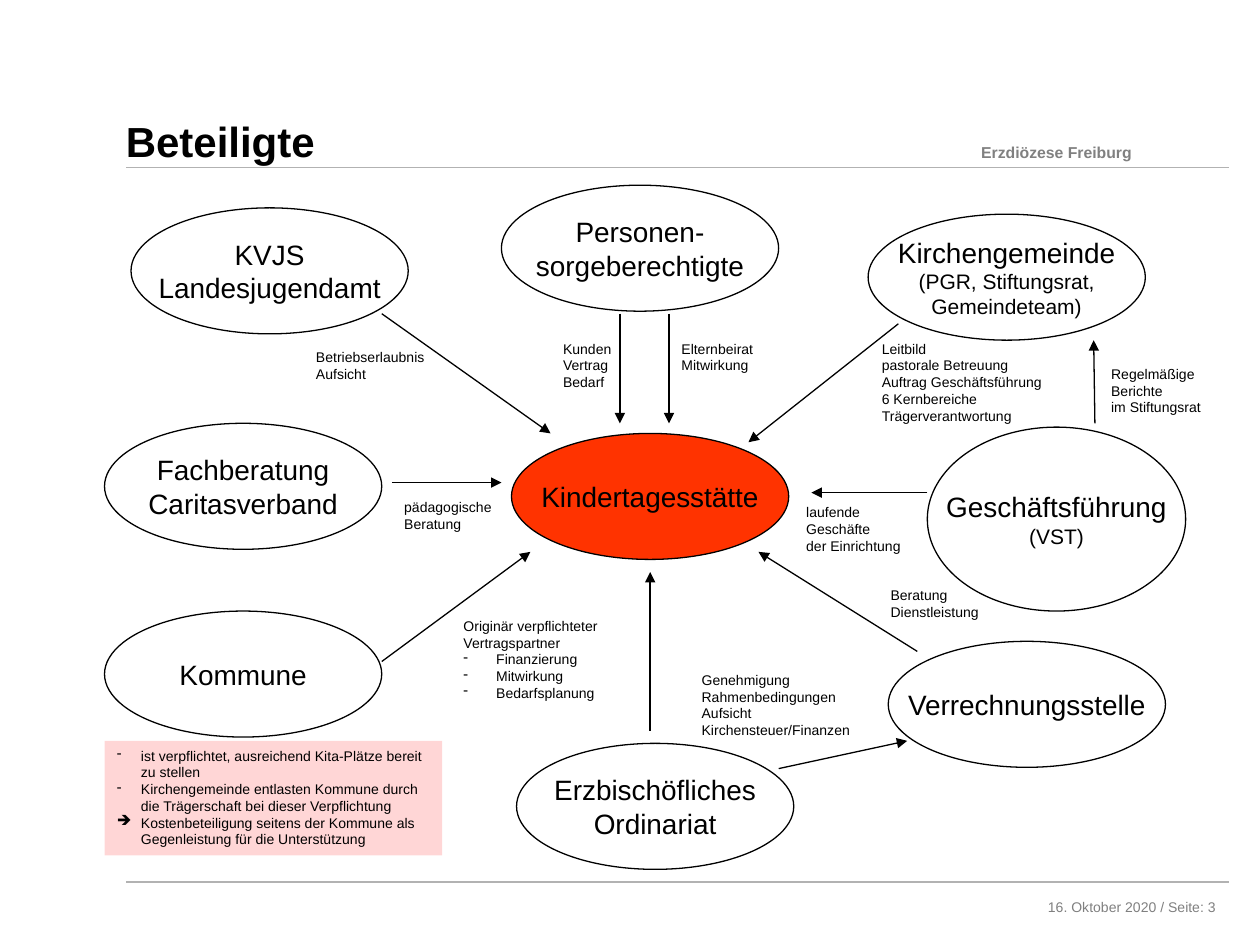
from dataclasses import dataclass

from lxml import etree
from pptx import Presentation
from pptx.dml.color import RGBColor
from pptx.enum.shapes import MSO_CONNECTOR, MSO_SHAPE
from pptx.enum.text import MSO_ANCHOR, MSO_AUTO_SIZE, PP_ALIGN
from pptx.oxml.ns import qn
from pptx.util import Inches, Pt

ELLIPSE, RECTANGLE = MSO_SHAPE.OVAL, MSO_SHAPE.RECTANGLE
STRAIGHT = MSO_CONNECTOR.STRAIGHT
LEFT, CENTER, RIGHT = PP_ALIGN.LEFT, PP_ALIGN.CENTER, PP_ALIGN.RIGHT
TOP, MIDDLE = MSO_ANCHOR.TOP, MSO_ANCHOR.MIDDLE
GROW = MSO_AUTO_SIZE.SHAPE_TO_FIT_TEXT


@dataclass(frozen=True)
class Theme:
    font: str = "Arial"
    ink: str = "000000"
    muted: str = "808080"
    rule: str = "B2B2B2"
    center: str = "FF3300"
    duty: str = "FF0000"
    duty_opacity: int = 16
    title: int = 24
    actor: int = 16
    detail: int = 12
    header: int = 9
    note: int = 8
    line: float = 0.75


class StakeholderSlide:
    def __init__(self, slide, theme):
        self.shapes = slide.shapes
        self.theme = theme

    def set_lines(self, frame, lines, size, color=None, align=LEFT, bold=False,
                  detail_size=None, bullets=None, indent=0):
        """Fill a frame; bullets maps a line index to its bullet sign."""
        frame.text = "\n".join(lines)
        for index, paragraph in enumerate(frame.paragraphs):
            paragraph.alignment = align
            if bullets and index in bullets:
                props = paragraph._p.get_or_add_pPr()
                props.set("marL", str(Inches(indent)))
                props.set("indent", str(-Inches(indent)))
                etree.SubElement(props, qn("a:buChar"), char=bullets[index])
            for run in paragraph.runs:
                run.font.name = self.theme.font
                run.font.size = Pt(detail_size if detail_size and index else size)
                run.font.bold = bold
                run.font.color.rgb = RGBColor.from_string(color or self.theme.ink)

    def label(self, box, lines, size, wrap=True, grow=False, inset_top=0.05, **style):
        frame = self.shapes.add_textbox(*map(Inches, box)).text_frame
        frame.word_wrap = wrap
        frame.margin_top = Inches(inset_top)
        if grow:
            frame.auto_size = GROW
        self.set_lines(frame, lines, size, **style)

    def note(self, box, lines, wrap=False, **style):
        self.label(box, lines, self.theme.note, wrap=wrap, grow=True, **style)

    def actor(self, left, top, lines, width=2.2, height=1, fill=None, detail_size=None):
        oval = self.shapes.add_shape(ELLIPSE, *map(Inches, (left, top, width, height)))
        oval.shadow.inherit = False
        if fill:
            oval.fill.solid()
            oval.fill.fore_color.rgb = RGBColor.from_string(fill)
        else:
            oval.fill.background()
        oval.line.color.rgb = RGBColor.from_string(self.theme.ink)
        oval.line.width = Pt(self.theme.line)
        frame = oval.text_frame
        frame.word_wrap = False
        frame.vertical_anchor = MIDDLE
        self.set_lines(frame, lines, self.theme.actor, align=CENTER, detail_size=detail_size)

    def duty_box(self, box, lines, bullets):
        panel = self.shapes.add_shape(RECTANGLE, *map(Inches, box))
        panel.shadow.inherit = False
        panel.fill.solid()
        panel.fill.fore_color.rgb = RGBColor.from_string(self.theme.duty)
        color = panel._element.spPr.find(qn("a:solidFill"))[0]
        etree.SubElement(color, qn("a:alpha"), val=str(self.theme.duty_opacity * 1000))
        panel.line.fill.background()
        frame = panel.text_frame
        frame.word_wrap = True
        frame.vertical_anchor = TOP
        frame.auto_size = GROW
        self.set_lines(frame, lines, self.theme.note, bullets=bullets, indent=0.19)

    def line(self, start, end, color=None, arrow=True):
        connector = self.shapes.add_connector(STRAIGHT, *map(Inches, (*start, *end)))
        connector.line.color.rgb = RGBColor.from_string(color or self.theme.ink)
        connector.line.width = Pt(self.theme.line)
        properties = connector._element.spPr
        if arrow:
            etree.SubElement(properties.find(qn("a:ln")), qn("a:tailEnd"), type="triangle")
        etree.SubElement(properties, qn("a:effectLst"))


def main():
    presentation = Presentation()
    presentation.slide_width, presentation.slide_height = Inches(10), Inches(7.5)
    theme = Theme()
    page = StakeholderSlide(presentation.slides.add_slide(presentation.slide_layouts[6]), theme)

    # Page frame: rules, header, title, footer
    for rule_y in (7, 1.33):
        page.line((1, rule_y), (9.75, rule_y), color=theme.rule, arrow=False)
    page.label((7.5, 1.08, 1.58, 0.25), ["Erzdiözese Freiburg"], theme.header,
               color=theme.muted, align=RIGHT, bold=True)
    page.label((0.9, 0.84, 6.14, 0.38), ["Beteiligte"], theme.title, bold=True, inset_top=0.08)
    page.label((6.92, 7.08, 2.83, 0.25), ["16. Oktober 2020 / Seite: 3"], theme.note,
               color=theme.muted, align=RIGHT)

    # Centre and the parties around it
    page.actor(4.06, 3.44, ["Kindertagesstätte"], fill=theme.center)
    for left, top, lines in (
        (4.1, 5.9, ["Erzbischöfliches", "Ordinariat"]),
        (0.83, 4.85, ["Kommune"]),
        (1.04, 1.65, ["KVJS", "Landesjugendamt"]),
        (7.05, 5.09, ["Verrechnungsstelle"]),
        (3.98, 1.47, ["Personen-", "sorgeberechtigte"]),
        (0.83, 3.36, ["Fachberatung", "Caritasverband"]),
    ):
        page.actor(left, top, lines)
    page.actor(7.36, 3.39, ["Geschäftsführung", "(VST)"], width=2.05, height=1.46,
               detail_size=theme.detail)
    page.actor(6.89, 1.7, ["Kirchengemeinde", "(PGR, Stiftungsrat,", "Gemeindeteam)"],
               detail_size=theme.detail)

    # Relations
    for start, end in (
        ((4.92, 2.49), (4.92, 3.36)),  # parents as customers
        ((5.31, 2.49), (5.31, 3.36)),  # parents' council
        ((7.36, 3.91), (6.44, 3.91)),  # management
        ((7.28, 5.17), (6.02, 4.38)),  # accounting office
        ((7.13, 2.57), (5.94, 3.51)),  # parish
        ((5.16, 5.8), (5.16, 4.54)),   # ordinariate
        ((3.03, 5.25), (4.21, 4.38)),  # municipality
        ((3.11, 3.83), (3.98, 3.83)),  # expert advice
        ((3.03, 2.49), (4.37, 3.44)),  # youth office
        ((8.69, 3.36), (8.68, 2.7)),   # management to parish
        ((6.18, 6.1), (7.2, 5.88)),    # ordinariate to accounting office
    ):
        page.line(start, end)

    # Notes on the relations
    for box, lines in (
        ((6.9, 2.65, 1.49, 0.77), ["Leitbild", "pastorale Betreuung", "Auftrag Geschäftsführung",
                                   "6 Kernbereiche", "Trägerverantwortung"]),
        ((6.97, 4.61, 0.9, 0.37), ["Beratung", "Dienstleistung"]),
        ((2.41, 2.72, 1.06, 0.37), ["Betriebserlaubnis", "Aufsicht"]),
        ((3.11, 3.91, 0.9, 0.37), ["pädagogische", "Beratung"]),
        ((5.47, 5.28, 1.39, 0.64), ["Genehmigung", "Rahmenbedingungen", "Aufsicht",
                                    "Kirchensteuer/Finanzen"]),
        ((4.37, 2.65, 0.59, 0.5), ["Kunden", "Vertrag", "Bedarf"]),
        ((5.31, 2.65, 0.77, 0.37), ["Elternbeirat", "Mitwirkung"]),
    ):
        page.note(box, lines)
    page.note((6.3, 3.95, 1.09, 0.5), ["laufende Geschäfte", "der Einrichtung"], wrap=True)
    page.note((8.72, 2.85, 1.25, 0.5), ["Regelmäßige Berichte", "im Stiftungsrat"], wrap=True)
    page.note((3.58, 4.85, 1.28, 0.77),
              ["Originär verpflichteter", "Vertragspartner", "Finanzierung", "Mitwirkung",
               "Bedarfsplanung"],
              bullets={2: "-", 3: "-", 4: "-"}, indent=0.26)

    # Duties of the municipality
    page.duty_box((0.83, 5.88, 2.68, 0.91), [
        "ist verpflichtet, ausreichend Kita-Plätze bereit zu stellen",
        "Kirchengemeinde entlasten Kommune durch die Trägerschaft bei dieser Verpflichtung",
        "Kostenbeteiligung seitens der Kommune als Gegenleistung für die Unterstützung",
    ], bullets={0: "-", 1: "-", 2: "➔"})

    presentation.save("out.pptx")


if __name__ == "__main__":
    main()
